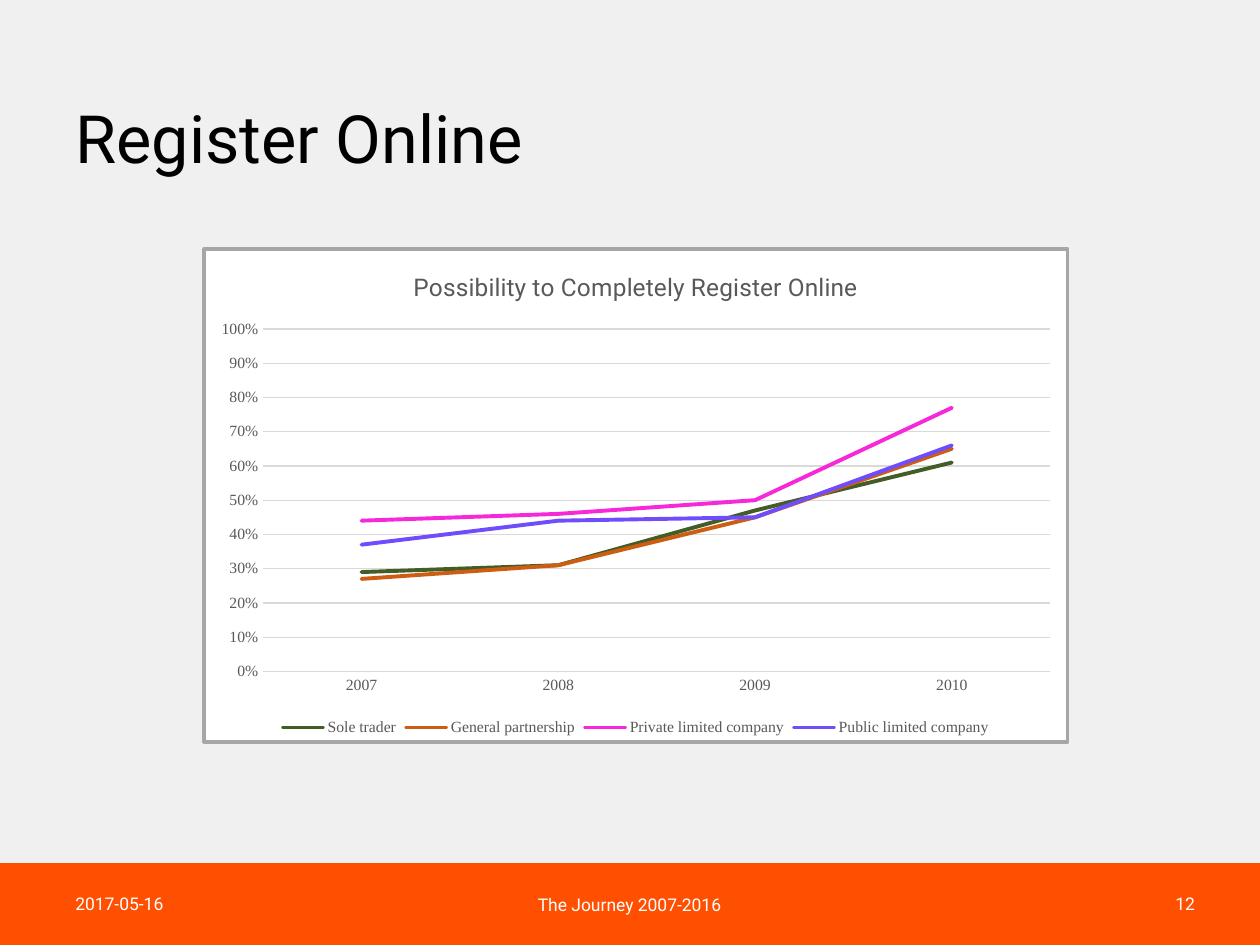
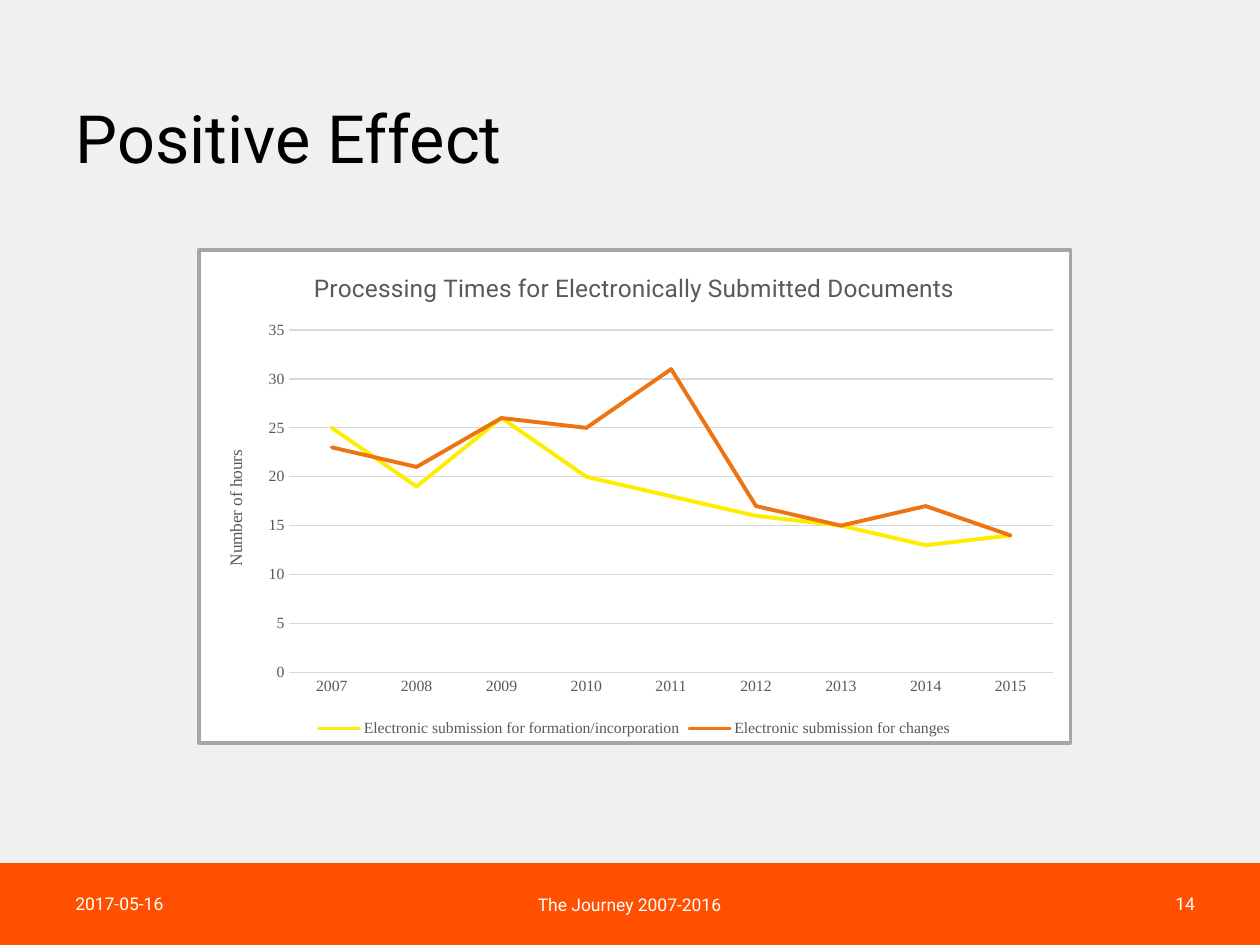
from collections import namedtuple

from lxml.etree import fromstring
from pptx import Presentation
from pptx.chart.data import CategoryChartData as ChartData
from pptx.dml.color import RGBColor
from pptx.enum.chart import XL_CHART_TYPE as ChartType
from pptx.enum.chart import XL_LEGEND_POSITION as LegendPosition
from pptx.enum.chart import XL_MARKER_STYLE as Marker
from pptx.enum.chart import XL_TICK_MARK as TickMark
from pptx.enum.shapes import MSO_SHAPE as Shape
from pptx.enum.text import MSO_ANCHOR as Anchor
from pptx.enum.text import PP_ALIGN as Align
from pptx.util import Cm, Pt

Box = namedtuple("Box", "left top width height")
Scale = namedtuple("Scale", "top step format title")

SLIDE = Box(0, 0, 25.4, 19.05)
TITLE = Box(1.27, 1.02, 23.04, 3.68)
BAND = Box(0, 17.4, 25.4, 1.65)

SANS, SERIF = "Roboto", "Times New Roman"
GROUND, ORANGE, WHITE, BLACK = "F0F0F0", "FE5000", "FFFFFF", "000000"
GREY, GRID, FRAME = "595959", "D9D9D9", "A6A6A6"

DATE = "2017-05-16"
JOURNEY = "The Journey 2007-2016"

CHART_FRAME = """
<c:spPr xmlns:c="http://schemas.openxmlformats.org/drawingml/2006/chart"
        xmlns:a="http://schemas.openxmlformats.org/drawingml/2006/main">
  <a:solidFill><a:srgbClr val="{fill}"/></a:solidFill>
  <a:ln w="{width}"><a:solidFill><a:srgbClr val="{line}"/></a:solidFill></a:ln>
</c:spPr>"""


def colour(code):
    return RGBColor.from_string(code)


def place(box):
    return [Cm(length) for length in box]


def style_font(font, name, size, code):
    font.name = name
    font.size = Pt(size)
    font.color.rgb = colour(code)
    font.bold = False


def style_line(line, code, width):
    line.color.rgb = colour(code)
    line.width = Pt(width)


def write(frame, text, name, size, code, align=None):
    para = frame.paragraphs[0]
    para.alignment = align
    span = para.add_run()
    span.text = text
    style_font(span.font, name, size, code)
    return para


def add_title(page, box, text):
    title = page.shapes.title
    title.left, title.top, title.width, title.height = place(box)
    title.text_frame.vertical_anchor = Anchor.MIDDLE
    para = write(title.text_frame, text, SANS, 38, BLACK, Align.LEFT)
    para.line_spacing = 0.9


def add_footer(page, box, number):
    band = page.shapes.add_shape(Shape.RECTANGLE, *place(box))
    band.shadow.inherit = False
    band.fill.solid()
    band.fill.fore_color.rgb = colour(ORANGE)
    band.line.fill.background()
    labels = [
        (1.27, 0.3, DATE, Align.LEFT),
        (9.83, 0.33, JOURNEY, Align.CENTER),
        (18.62, 0.3, str(number), Align.RIGHT),
    ]
    for left, top, text, align in labels:
        spot = Box(box.left + left, box.top + top, 5.72, 1.02)
        label = page.shapes.add_textbox(*place(spot))
        label.text_frame.word_wrap = True
        label.text_frame.vertical_anchor = Anchor.MIDDLE
        write(label.text_frame, text, SANS, 10, WHITE, align)


def style_axes(chart, scale):
    years, values = chart.category_axis, chart.value_axis
    for axis in (years, values):
        axis.major_tick_mark = axis.minor_tick_mark = TickMark.NONE
        style_font(axis.tick_labels.font, SERIF, 9, GREY)
    style_line(years.format.line, GRID, 0.75)
    values.format.line.fill.background()
    values.minimum_scale, values.maximum_scale = 0, scale.top
    values.major_unit = scale.step
    values.tick_labels.number_format = scale.format
    values.tick_labels.number_format_is_linked = False
    values.has_major_gridlines = True
    style_line(values.major_gridlines.format.line, GRID, 0.75)
    if scale.title:
        frame = values.axis_title.text_frame
        write(frame, scale.title, SERIF, 10, GREY)
        frame._txBody.bodyPr.set("rot", "-5400000")
        frame._txBody.bodyPr.set("vert", "horz")


def add_line_chart(page, box, heading, years, rows, scale):
    data = ChartData(number_format=scale.format)
    data.categories = [str(year) for year in years]
    for name, code, values in rows:
        data.add_series(name, values)
    chart = page.shapes.add_chart(ChartType.LINE, *place(box), data).chart
    frame = CHART_FRAME.format(fill=WHITE, line=FRAME, width=Pt(2.25))
    chart._chartSpace.chart.addnext(fromstring(frame))
    style_font(chart.font, SERIF, 10, BLACK)

    chart.has_title = True
    write(chart.chart_title.text_frame, heading, SANS, 14, GREY)
    chart.has_legend = True
    chart.legend.position = LegendPosition.BOTTOM
    chart.legend.include_in_layout = False
    style_font(chart.legend.font, SERIF, 9, GREY)
    style_axes(chart, scale)

    plot = chart.plots[0]
    plot.vary_by_categories = False
    for series, (name, code, values) in zip(plot.series, rows):
        series.smooth = False
        series.marker.style = Marker.NONE
        style_line(series.format.line, code, 2.25)
        series.format.line._get_or_add_ln().set("cap", "rnd")


def add_chart_page(deck, number, title, box, heading, years, rows, scale):
    page = deck.slides.add_slide(deck.slide_layouts.get_by_name("Title Only"))
    add_footer(page, BAND, number)
    add_title(page, TITLE, title)
    add_line_chart(page, box, heading, years, rows, scale)


def main():
    deck = Presentation()
    deck.slide_width, deck.slide_height = Cm(SLIDE.width), Cm(SLIDE.height)
    ground = deck.slide_master.background.fill
    ground.solid()
    ground.fore_color.rgb = colour(GROUND)

    add_chart_page(
        deck, 12, "Register Online", Box(4.08, 4.98, 17.48, 10.01),
        "Possibility to Completely Register Online", range(2007, 2011),
        [
            ("Sole trader", "425D25", [0.29, 0.31, 0.47, 0.61]),
            ("General partnership", "CC5D12", [0.27, 0.31, 0.45, 0.65]),
            ("Private limited company", "F628D9", [0.44, 0.46, 0.5, 0.77]),
            ("Public limited company", "6F4DFD", [0.37, 0.44, 0.45, 0.66]),
        ],
        Scale(1, 0.1, "0%", None),
    )
    add_chart_page(
        deck, 14, "Positive Effect", Box(3.97, 5, 17.65, 10.01),
        "Processing Times for Electronically Submitted Documents",
        range(2007, 2016),
        [
            ("Electronic submission for formation/incorporation", "FFED00",
             [25, 19, 26, 20, 18, 16, 15, 13, 14]),
            ("Electronic submission for changes", "EE7413",
             [23, 21, 26, 25, 31, 17, 15, 17, 14]),
        ],
        Scale(35, 5, "0", "Number of hours"),
    )
    deck.save("out.pptx")


if __name__ == "__main__":
    main()
